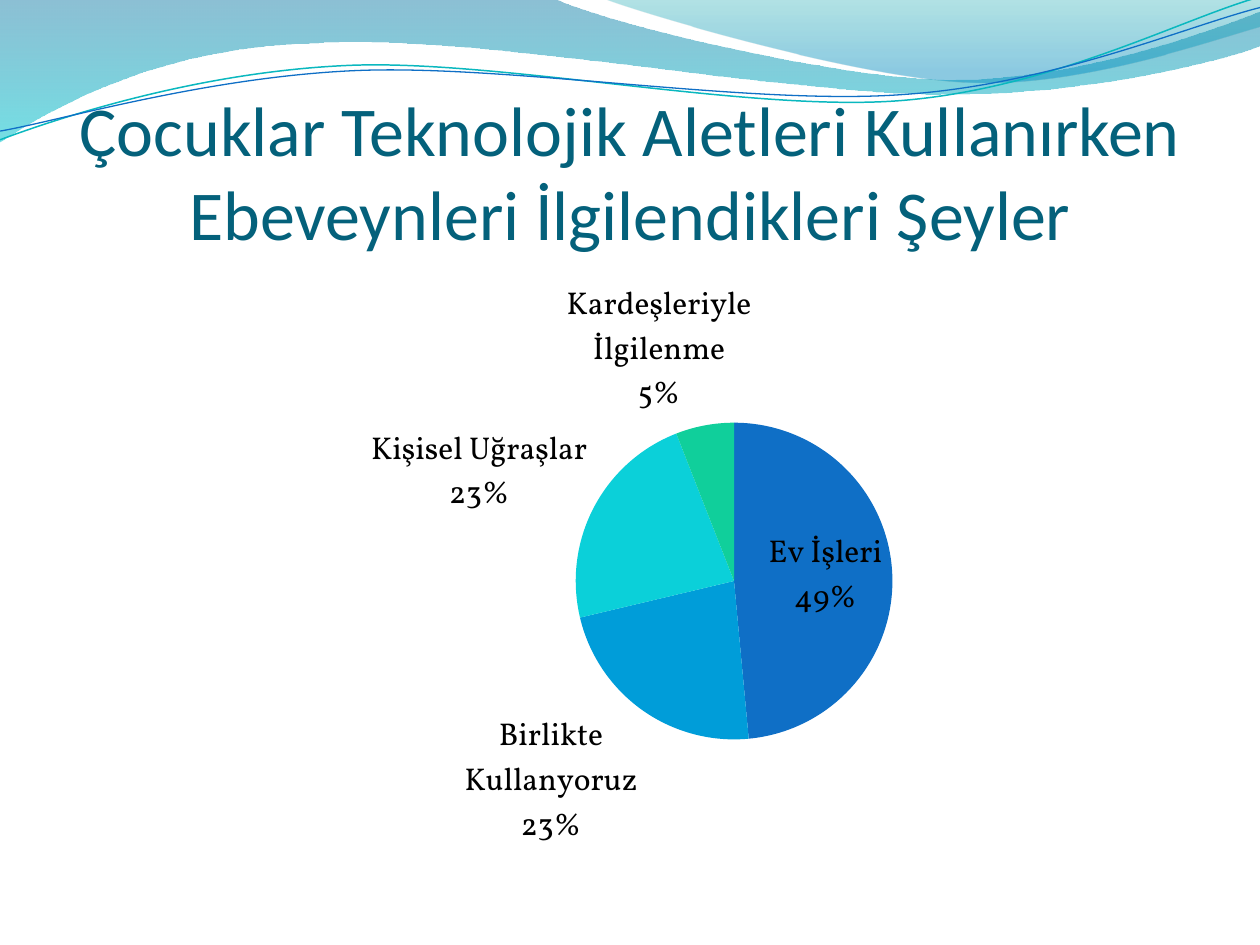
from lxml import etree
from pptx import Presentation
from pptx.chart.data import CategoryChartData
from pptx.dml.color import RGBColor
from pptx.enum import chart as ch, text as tx
from pptx.oxml import ns
from pptx.util import Pt

WHITE = RGBColor(0xFF, 0xFF, 0xFF)
BLACK = RGBColor(0, 0, 0)
TITLE = RGBColor(0x04, 0x61, 0x7B)
TEAL = RGBColor(0x0A, 0xB8, 0xBF)
BLUE = RGBColor(0x0F, 0x6F, 0xC6)
SKY = RGBColor(0x00, 0x9D, 0xD9)
AQUA = RGBColor(0x0B, 0xD0, 0xD9)
GREEN = RGBColor(0x10, 0xCF, 0x9B)
DEEP = RGBColor(0x00, 0x74, 0xA1)
FOAM = RGBColor(0x00, 0xC6, 0xCF)
LAGOON = RGBColor(0x00, 0xA1, 0xA9)
OCEAN = RGBColor(0x00, 0x8B, 0xBF)

WAVE = [(0, 0), (316.8, -0.7), (342.7, 12.2, 478.1, 45.4, 545.8, 45.4),
        (614.2, 45.4, 689.8, 18.7, 720, 6.5), (720.7, 25.9),
        (707.8, 31.7, 626.4, 54.7, 537.1, 54), (447.8, 54, 275, 20.2, 185, 24.5),
        (92.9, 25.9, 33.1, 59.8, -0.7, 81.4), (0, 0)]
SWELL = [(344.9, -0.7), (366.5, 7.9, 491, 44.6, 553.7, 46.8),
         (616.3, 49.7, 691.9, 23, 720, 15.1), (720, 0), (344.9, -0.7)]
CREST = [(0, 79.9), (34.6, 67, 113.8, 41, 199.4, 37.4),
         (284.4, 33.8, 427, 64.1, 513.4, 57.6), (599.8, 51.1, 675.4, 10.8, 718.6, -1.4)]
TROUGH = [(0, 74.9), (33.8, 69.1, 118.1, 43.9, 203.8, 40.3),
          (290.2, 36.7, 429.8, 60.5, 516.2, 54), (601.9, 48.2, 677.5, 15.1, 720, 4.3)]

SLICES = [("ev işleri", 49, "Ev İşleri", "49%", BLUE, (7, 0)),
          ("birlikte kullanyoruz", 23, "Birlikte Kullanyoruz", "23%", SKY, None),
          ("kişisel uğraşlar", 23, "Kişisel Uğraşlar", "23%", AQUA, (0, 8)),
          ("kardeşleriyle ilgilenme", 6, "Kardeşleriyle İlgilenme", "5%", GREEN, (27.5, 0))]


def outline(slide, steps, left, top):
    """Draw an outline of straight and cubic steps from the given corner."""
    dots = [(Pt(left + x), Pt(top + y)) for step in steps
            for x, y in zip(step[::2], step[1::2])]
    pen = slide.shapes.build_freeform(*dots[0], scale=1.0)
    pen.add_line_segments(dots[1:], close=False)
    shape = pen.convert_to_shape()
    shape.shadow.inherit = False
    legs = iter(list(shape._element.iter(ns.qn("a:lnTo"))))
    for step in steps[1:]:
        leg = next(legs)
        if len(step) == 6:
            curve = etree.Element(ns.qn("a:cubicBezTo"))
            leg.addprevious(curve)
            for part in (leg, next(legs), next(legs)):
                curve.append(part[0])
                part.getparent().remove(part)
    if steps[0] == steps[-1]:
        track = next(shape._element.iter(ns.qn("a:path")))
        etree.SubElement(track, ns.qn("a:close"))
    return shape


def shade(shape, stops):
    """Fill a shape from top to bottom with see-through colours."""
    shape.line.fill.background()
    shape.fill.gradient()
    grad = shape._element.spPr.find(ns.qn("a:gradFill"))
    for part in list(grad):
        grad.remove(part)
    row = etree.SubElement(grad, ns.qn("a:gsLst"))
    for place, color, alpha in stops:
        stop = etree.SubElement(row, ns.qn("a:gs"), pos=str(place * 1000))
        tint = etree.SubElement(stop, ns.qn("a:srgbClr"), val=str(color))
        etree.SubElement(tint, ns.qn("a:alpha"), val=str(alpha * 1000))
    etree.SubElement(grad, ns.qn("a:lin"), ang="5400000", scaled="0")


def ribbon(slide, left, top):
    """Draw the waves and the two lines along the top edge."""
    for steps, stops in ((WAVE, [(0, DEEP, 45), (100, FOAM, 55)]),
                         (SWELL, [(0, LAGOON, 30), (80, OCEAN, 45)])):
        shade(outline(slide, steps, left, top), stops)
    for steps, color, width in ((CREST, TEAL, 0.85), (TROUGH, BLUE, 0.75)):
        line = outline(slide, steps, left, top)
        line.fill.background()
        line.line.color.rgb = color
        line.line.width = Pt(width)


def write(para, words, font, size, color):
    """Put centred, formatted words into a paragraph."""
    para.alignment = tx.PP_ALIGN.CENTER
    run = para.add_run()
    run.text = words
    run.font.name = font
    run.font.size = Pt(size)
    run.font.color.rgb = color


def heading(slide, left, top, width, height):
    """Place the title at the foot of its box."""
    box = slide.shapes.add_textbox(Pt(left), Pt(top), Pt(width), Pt(height))
    frame = box.text_frame
    frame.word_wrap = True
    frame.vertical_anchor = tx.MSO_ANCHOR.BOTTOM
    frame.margin_left = frame.margin_right = frame.margin_bottom = 0
    frame.margin_top = Pt(3.6)
    write(frame.paragraphs[0],
          "Çocuklar Teknolojik Aletleri Kullanırken Ebeveynleri İlgilendikleri Şeyler",
          font="Calibri", size=40, color=TITLE)


def settle(owner, index, **parts):
    """Give a chart part a manual layout at the given child index."""
    for old in owner.findall(ns.qn("c:layout")):
        owner.remove(old)
    layout = etree.Element(ns.qn("c:layout"))
    owner.insert(index, layout)
    manual = etree.SubElement(layout, ns.qn("c:manualLayout"))
    for tag, value in parts.items():
        etree.SubElement(manual, ns.qn("c:" + tag), val=str(value))


def pie(slide, left, top, width, height):
    """Place the pie chart with a label for each slice."""
    data = CategoryChartData()
    data.categories = [name for name, *_ in SLICES]
    data.add_series("Series 1", [value for _, value, *_ in SLICES])
    chart = slide.shapes.add_chart(ch.XL_CHART_TYPE.PIE, Pt(left), Pt(top),
                                   Pt(width), Pt(height), data).chart
    chart.has_title = chart.has_legend = False
    chart.font.name = "Vollkorn"
    chart.font.size = Pt(18)
    chart.font.color.rgb = BLACK
    plot = chart.plots[0]
    plot.vary_by_categories = True
    series = plot.series[0]
    tags = series.data_labels
    tags.show_category_name = tags.show_percentage = True
    tags.show_value = False
    spot = ch.XL_LABEL_POSITION
    for i, (_, _, words, share, color, shift) in enumerate(SLICES):
        point = series.points[i]
        point.format.fill.solid()
        point.format.fill.fore_color.rgb = color
        label = point.data_label
        frame = label.text_frame
        write(frame.paragraphs[0], words, font="Vollkorn", size=18, color=BLACK)
        write(frame.add_paragraph(), share, font="Vollkorn", size=18, color=BLACK)
        label.position = spot.OUTSIDE_END if i else spot.CENTER
        node = tags._element.findall(ns.qn("c:dLbl"))[i]
        for tag, flag in (("showVal", 0), ("showCatName", 1), ("showPercent", 1)):
            node.find(ns.qn("c:" + tag)).set("val", str(flag))
        if shift:
            settle(node, 1, x=shift[0] / width, y=shift[1] / height)
    settle(chart._chartSpace.chart.plotArea, 0, layoutTarget="inner", xMode="edge",
           yMode="edge", x=293 / width, y=89 / height, w=181 / width, h=181 / height)


def main():
    """Build and save the slide."""
    deck = Presentation()
    deck.slide_width, deck.slide_height = Pt(720), Pt(540)
    slide = deck.slides.add_slide(deck.slide_layouts[6])
    slide.background.fill.solid()
    slide.background.fill.fore_color.rgb = WHITE
    ribbon(slide, 0, 0)
    heading(slide, 36, 55.5, 648, 90)
    pie(slide, 36, 152.6, 648, 345.6)
    deck.save("out.pptx")


if __name__ == "__main__":
    main()
